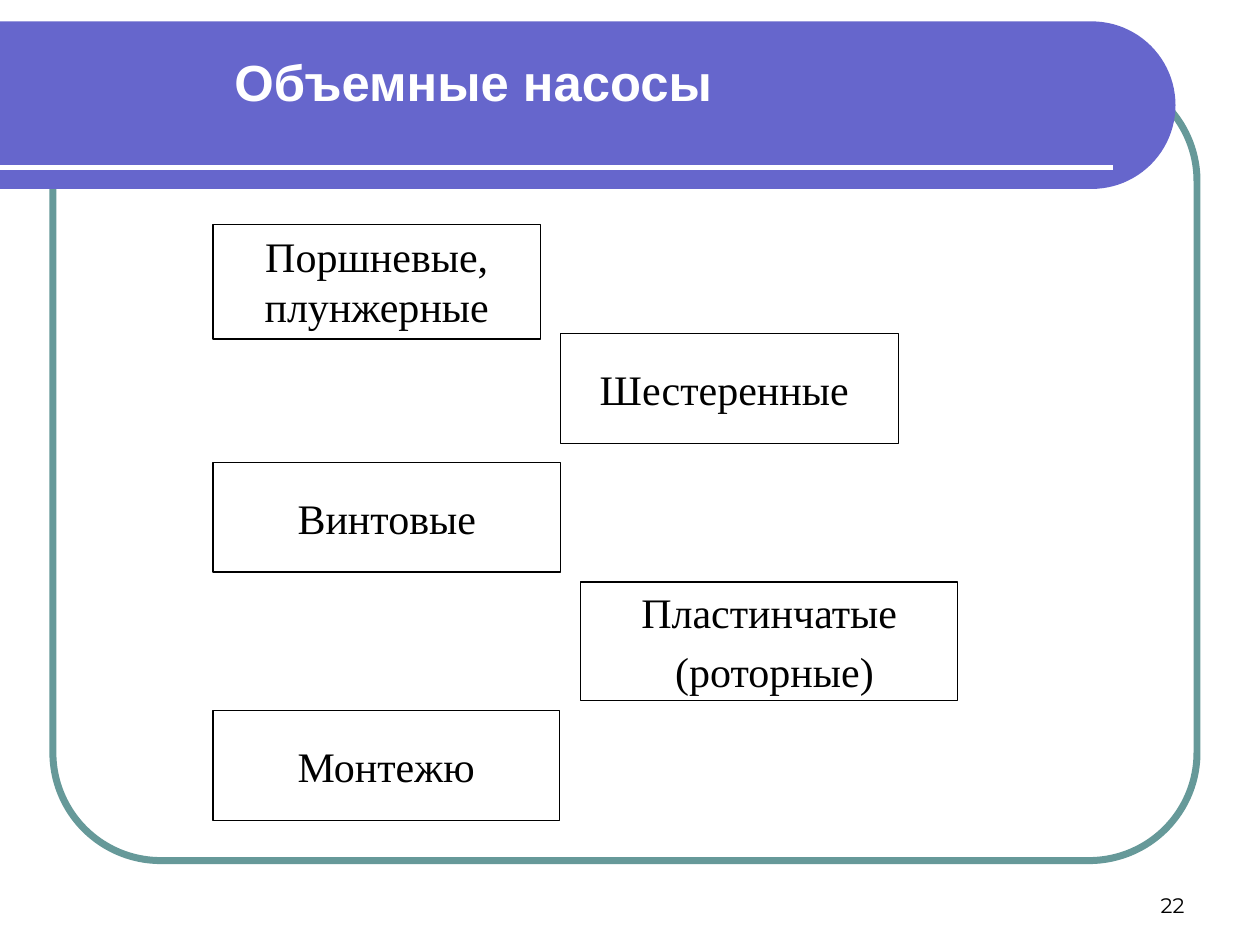
import math

import pptx
import pptx.dml.color
import pptx.enum.shapes
import pptx.enum.text
import pptx.oxml.xmlchemy
import pptx.util

COLORS = {"band": "6666CC", "frame": "669999", "white": "FFFFFF", "black": "000000"}
COLS, ROWS = 100, 75
ANCHOR = pptx.enum.text.MSO_ANCHOR
ALIGN = pptx.enum.text.PP_ALIGN
SHAPE = pptx.enum.shapes.MSO_SHAPE


class SlideBuilder:
    def __init__(self, prs):
        self.prs = prs
        self.slide = prs.slides.add_slide(prs.slide_layouts[5])
        self.shapes = self.slide.shapes

    def x(self, cols):
        return round(self.prs.slide_width * cols / COLS)

    def y(self, rows):
        return round(self.prs.slide_height * rows / ROWS)

    def area(self, left, top, width, height):
        return self.x(left), self.y(top), self.x(width), self.y(height)

    def color(self, name):
        return pptx.dml.color.RGBColor.from_string(COLORS[name])

    def paint(self, sp, fill=None, line=None, weight=0.75):
        sp.shadow.inherit = False
        if fill:
            sp.fill.solid()
            sp.fill.fore_color.rgb = self.color(fill)
        else:
            sp.fill.background()
        if line:
            sp.line.color.rgb = self.color(line)
            sp.line.width = pptx.util.Pt(weight)
        else:
            sp.line.fill.background()

    def set_text(self, sp, text, size, font, color, align, anchor, wrap=True, bold=False, before=0):
        tf = sp.text_frame
        tf.text = text
        tf.word_wrap = wrap
        tf.vertical_anchor = anchor
        for p in tf.paragraphs:
            p.alignment = align
            p.space_before = pptx.util.Pt(before)
            p.font.size = pptx.util.Pt(size)
            for r in p.runs:
                r.font.size = pptx.util.Pt(size)
                r.font.name = font
                r.font.bold = bold
                r.font.color.rgb = self.color(color)

    def frame(self, area, corner):
        sp = self.shapes.add_shape(SHAPE.ROUNDED_RECTANGLE, *self.area(*area))
        sp.adjustments[0] = corner
        self.paint(sp, line="frame", weight=4)

    def band(self, top, height, right, steps=48):
        radius = height / 2
        angles = [math.pi * (i / steps - 0.5) for i in range(steps + 1)]
        points = [
            (self.x(right - radius + radius * math.cos(a)), self.y(top + radius + radius * math.sin(a)))
            for a in angles
        ]
        builder = self.shapes.build_freeform(0, self.y(top))
        builder.add_line_segments(points + [(0, self.y(top + height))], close=True)
        self.paint(builder.convert_to_shape(), fill="band")

    def rule(self, row, right):
        line = self.shapes.add_connector(
            pptx.enum.shapes.MSO_CONNECTOR.STRAIGHT, 0, self.y(row), self.x(right), self.y(row)
        )
        line.line.color.rgb = self.color("white")
        line.line.width = pptx.util.Pt(3)
        line._element.spPr.append(pptx.oxml.xmlchemy.OxmlElement("a:effectLst"))

    def title(self, area, text):
        sp = self.shapes.title
        sp.left, sp.top, sp.width, sp.height = self.area(*area)
        self.set_text(sp, text, 29, "Arial", "white", ALIGN.LEFT, ANCHOR.MIDDLE, bold=True)
        sp.text_frame.auto_size = pptx.enum.text.MSO_AUTO_SIZE.NONE
        sp._element.getparent().append(sp._element)

    def number(self, area, text):
        sp = self.shapes.add_textbox(*self.area(*area))
        self.set_text(sp, text, 12, "Montserrat", "black", ALIGN.RIGHT, ANCHOR.BOTTOM)

    def box(self, area, text, fitted=False):
        sp = self.shapes.add_shape(SHAPE.RECTANGLE, *self.area(*area))
        self.paint(sp, fill="white", line="black")
        anchor = ANCHOR.TOP if fitted else ANCHOR.MIDDLE
        before = 0 if fitted else 4.8
        self.set_text(sp, text, 24, "Times New Roman", "black", ALIGN.CENTER, anchor, wrap=fitted, before=before)
        if fitted:
            sp.text_frame.auto_size = pptx.enum.text.MSO_AUTO_SIZE.SHAPE_TO_FIT_TEXT


def main():
    prs = pptx.Presentation()
    prs.slide_width = pptx.util.Inches(10)
    prs.slide_height = pptx.util.Inches(7.5)

    page = SlideBuilder(prs)
    page.frame((4.2, 5.8, 90.8, 62.5), 0.137)
    page.band(1.7, 13.3, 93.3)
    page.rule(13.3, 88.3)
    page.number((71.7, 68.3, 23.3, 5), "22")
    page.title((17.6, 5.5, 56.8, 6.7), "Объемные насосы\v")

    left = 16.9
    page.box((left, 17.8, 26, 9.1), "Поршневые, плунжерные", fitted=True)
    page.box((46.1, 46.2, 29.9, 9.4), "Пластинчатые\n (роторные)")
    page.box((left, 56.4, 27.5, 8.7), "Монтежю")
    page.box((left, 36.7, 27.6, 8.7), "Винтовые")
    page.box((44.5, 26.5, 26.8, 8.7), "Шестеренные ")

    prs.save("out.pptx")


if __name__ == "__main__":
    main()
